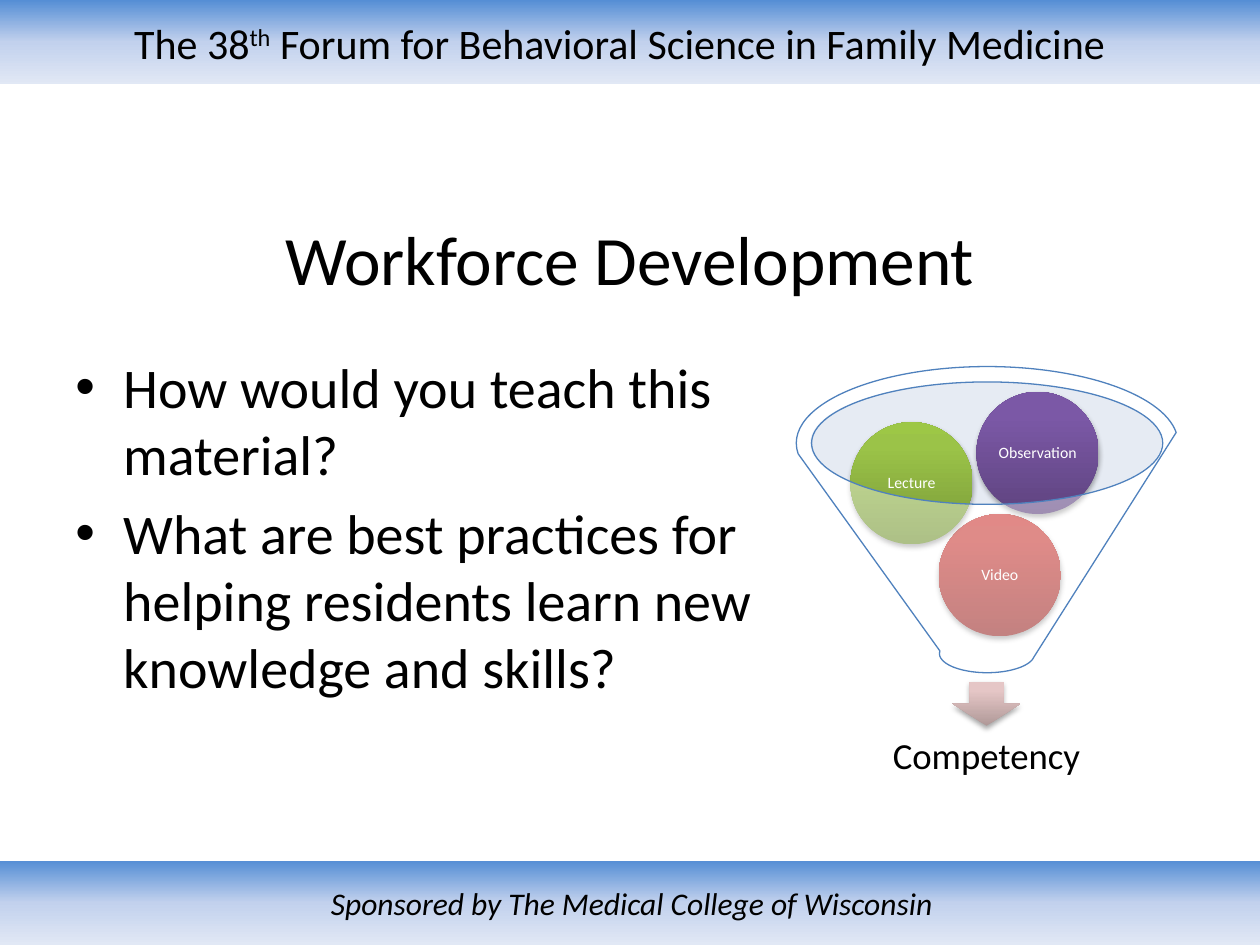
from copy import deepcopy
from lxml.etree import SubElement as Sub
from pptx import Presentation
from pptx.dml.color import RGBColor as RGB
from pptx.enum.shapes import MSO_SHAPE as Kind
from pptx.enum.text import MSO_ANCHOR as Anchor, MSO_AUTO_SIZE as Auto, PP_ALIGN as Align
from pptx.oxml.ns import qn
from pptx.util import Inches, Pt

HUES = {
    "black": "000000", "white": "FFFFFF", "rim": "4F81BD", "pool": "C2CDE1",
    "bar": ["558ED5", "C2D1ED", "E1E8F5"],
    "arrow": ["B09998", "E5C6C6", "E6C7C6"],
    "red": ["9C2F2D", "CB3E3A", "CE3B37"],
    "green": ["779737", "9BC348", "9DC746"],
    "plum": ["5F4480", "7B58A6", "7C57A8"],
}

deck = Presentation()
deck.slide_width, deck.slide_height = Inches(10), Inches(7.5)
col, row = deck.slide_width / 100, deck.slide_height / 100
slide = deck.slides.add_slide(deck.slide_layouts[5])


def draw(kind, x, y, wide, high, hue, mid=None, angle=90, clear=False):
    shape = slide.shapes.add_shape(kind, int(x * col), int(y * row), int(wide * col), int(high * row))
    shape.shadow.inherit = False
    shape.line.fill.background()
    props = shape._element.spPr
    if mid:
        shape.fill.gradient()
        shape.fill.gradient_angle = angle
        stops = props.find(".//" + qn("a:gsLst"))
        stops.append(deepcopy(stops[-1]))
        for stop, place, tint in zip(shape.fill.gradient_stops, (0, mid, 1), HUES[hue]):
            stop.position = place
            stop.color.rgb = RGB.from_string(tint)
    else:
        shape.fill.solid()
        shape.fill.fore_color.rgb = RGB.from_string(HUES[hue])
    if clear:
        Sub(props.find(".//" + qn("a:srgbClr")), qn("a:alpha"), val="40000")
    if mid == 0.8:
        glow = Sub(props.find(qn("a:effectLst")), qn("a:outerShdw"), blurRad=str(Pt(3.1)),
                   dist=str(Pt(1.8)), dir="5400000", rotWithShape="0")
        tone = Sub(glow, qn("a:srgbClr"), val=HUES["black"])
        Sub(tone, qn("a:alpha"), val="35000")
    return shape


def write(para, words, size, hue="black", slant=False):
    run = para.add_run()
    run.text = words
    font = run.font
    font.name, font.size, font.italic = "Calibri", Pt(size), slant
    font.color.rgb = RGB.from_string(HUES[hue])
    return run


band = 8.93
head = draw(Kind.RECTANGLE, 0, 0, 100, band, "bar", 0.5, 270)
foot = draw(Kind.RECTANGLE, 0, 100 - band, 100.3, band, "bar", 0.5, 270)
for bar in (head, foot):
    bar.text_frame.vertical_anchor = Anchor.MIDDLE
    bar.text_frame.paragraphs[0].alignment = Align.CENTER
head.text_frame.margin_right = Inches(0.26)
line = head.text_frame.paragraphs[0]
write(line, "The 38", 24)
write(line, "th", 24).font._element.set("baseline", "30000")
write(line, " Forum for Behavioral Science in Family Medicine", 24)
write(foot.text_frame.paragraphs[0], "Sponsored by The Medical College of Wisconsin", 18, slant=True)

title = slide.shapes.title
title.left, title.top = int(5 * col), int(22.27 * row)
title.width, title.height = int(90 * col), int(10 * row)
title.text_frame.auto_size = Auto.NONE
title.text_frame.vertical_anchor = Anchor.MIDDLE
title.text_frame.paragraphs[0].alignment = Align.CENTER
write(title.text_frame.paragraphs[0], "Workforce Development", 39.6)

draw(Kind.OVAL, 64.3, 40.4, 27.9, 12.93, "pool", clear=True)
draw(Kind.DOWN_ARROW, 75.6, 72.13, 5.4, 4.67, "arrow", 0.8)

goal = slide.shapes.add_textbox(int(65.3 * col), int(75.87 * row), int(26 * col), int(8.67 * row))
labels = [(goal, "Competency", 21, "black", 0.16)]
for words, x, y, hue in (
    ("Video", 74.5, 54.4, "red"),
    ("Lecture", 67.5, 44.67, "green"),
    ("Observation", 77.5, 41.47, "plum"),
):
    ball = draw(Kind.OVAL, x, y, 9.7, 12.93, hue, 0.8)
    labels.append((ball, words, 9, "white", 0.01))

for shape, words, size, hue, gap in labels:
    frame = shape.text_frame
    frame.word_wrap = True
    frame.vertical_anchor = Anchor.MIDDLE
    frame.margin_left = frame.margin_right = frame.margin_top = frame.margin_bottom = Inches(gap)
    para = frame.paragraphs[0]
    para.alignment, para.line_spacing = Align.CENTER, 0.9
    write(para, words, size, hue)

cone = draw(Kind.FUNNEL, 63.2, 38.8, 30.3, 32.4, "white", clear=True)
cone.line.color.rgb = RGB.from_string(HUES["rim"])
cone.line.width = Pt(0.75)

body = slide.shapes.add_textbox(int(5 * col), int(36.67 * row), int(56.7 * col), int(51.07 * row)).text_frame
body.word_wrap = True
for spot, words in enumerate((
    "How would you teach this material?",
    "What are best practices for helping residents learn new knowledge and skills?",
)):
    para = body.add_paragraph() if spot else body.paragraphs[0]
    props = para._element.get_or_add_pPr()
    props.set("marL", str(Inches(0.38)))
    props.set("indent", str(-Inches(0.38)))
    Sub(props, qn("a:buFont"), typeface="Arial")
    Sub(props, qn("a:buChar"), char="•")
    para.space_before = Pt(6.4 * spot)
    write(para, words, 32)

deck.save("out.pptx")
